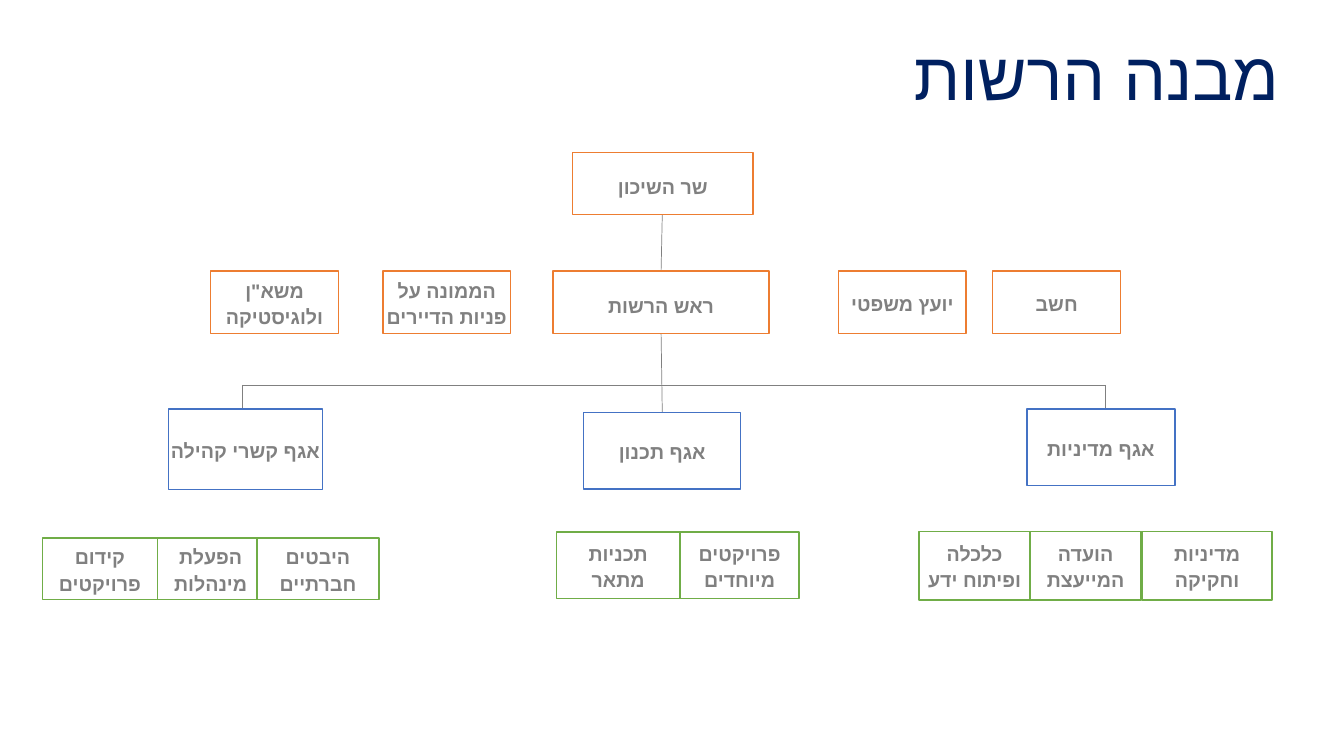
from lxml.etree import SubElement
from pptx import Presentation
from pptx.dml.color import RGBColor
from pptx.enum.shapes import MSO_CONNECTOR, MSO_SHAPE
from pptx.enum.text import MSO_ANCHOR, MSO_AUTO_SIZE, PP_ALIGN
from pptx.oxml.ns import qn
from pptx.util import Cm, Pt

NAVY = RGBColor(0x00, 0x20, 0x60)
GRAY = RGBColor(0x80, 0x80, 0x80)
WHITE = RGBColor(0xFF, 0xFF, 0xFF)
ORANGE = RGBColor(0xED, 0x7D, 0x31)
BLUE = RGBColor(0x44, 0x72, 0xC4)
GREEN = RGBColor(0x70, 0xAD, 0x47)
FONT = "Arial"

deck = Presentation()
deck.slide_width, deck.slide_height = Cm(33.87), Cm(19.05)
slide = deck.slides.add_slide(deck.slide_layouts[5])


def add_text(para, text, size, color, bold):
    """Add one Hebrew run, with the font set for complex script too."""
    run = para.add_run()
    run.text = text
    font = run.font
    font.name, font.size, font.bold = FONT, Pt(size), bold
    font.color.rgb = color
    SubElement(font._element, qn("a:cs")).set("typeface", FONT)


def add_box(text, left, top, width, height, color, pitch=18.7, rtl=False):
    box = slide.shapes.add_shape(
        MSO_SHAPE.RECTANGLE, Cm(left), Cm(top), Cm(width), Cm(height))
    box.shadow.inherit = False
    box.fill.solid()
    box.fill.fore_color.rgb = WHITE
    box.line.color.rgb = color
    box.line.width = Pt(1)
    frame = box.text_frame
    frame.word_wrap = True
    frame.vertical_anchor = MSO_ANCHOR.MIDDLE
    frame.margin_left = frame.margin_right = 0
    frame.margin_top = frame.margin_bottom = Cm(0.18)
    para = frame.paragraphs[0]
    para.alignment = PP_ALIGN.CENTER
    para.line_spacing = Pt(pitch)
    if rtl:
        para._p.get_or_add_pPr().set("rtl", "1")
    for index, part in enumerate(text.split("\n")):
        if index:
            para.add_line_break()
        add_text(para, part, 14, GRAY, True)


# Title
title = slide.shapes.title
title.left, title.top = Cm(4.32), Cm(0.71)
title.width, title.height = Cm(28.17), Cm(2.31)
title.text_frame.auto_size = MSO_AUTO_SIZE.NONE
title.text_frame.vertical_anchor = MSO_ANCHOR.TOP
para = title.text_frame.paragraphs[0]
para.alignment = PP_ALIGN.RIGHT
para._p.get_or_add_pPr().set("rtl", "1")
add_text(para, "מבנה הרשות", 48, NAVY, False)

# Links between the levels
BUS, LOW = 9.7, 10.31
WEST, EAST = 6.12, 27.86
links = [
    (16.69, 5.41, 16.66, 6.83),
    (16.66, 8.4, 16.69, 10.39),
    (WEST, BUS, EAST, BUS),
    (WEST, BUS, WEST, LOW),
    (EAST, BUS, EAST, LOW),
]
for ends in links:
    link = slide.shapes.add_connector(
        MSO_CONNECTOR.STRAIGHT, *[Cm(end) for end in ends])
    link.line.color.rgb = GRAY
    link.line.width = Pt(0.5)
    SubElement(link._element.spPr, qn("a:effectLst"))

# Minister, head and staff
ROW, HIGH = 6.83, 1.57
add_box("שר השיכון", 14.43, 3.84, 4.55, HIGH, ORANGE, 21.3, True)
add_box("ראש הרשות", 13.94, ROW, 5.44, HIGH, ORANGE, 21.3, True)
staff = [
    ("חשב", 25.02),
    ("יועץ משפטי", 21.13),
    ("הממונה על פניות הדיירים", 9.65),
    ('משא"ן ולוגיסטיקה', 5.31),
]
for text, left in staff:
    add_box(text, left, ROW, 3.22, HIGH, ORANGE)

# Divisions
units = [
    ("אגף מדיניות", 25.88, LOW, 3.73, 1.93),
    ("אגף תכנון", 14.71, 10.39, 3.96, 1.93),
    ("אגף קשרי קהילה", 4.24, LOW, 3.89, 2.03),
]
for unit in units:
    add_box(*unit, BLUE)

# Teams: top and height of each group, then text, left and width
groups = [
    (13.39, 1.73, [("מדיניות וחקיקה", 28.78, 3.28),
                   ("הועדה\nהמייעצת", 25.96, 2.8),
                   ("כלכלה\nופיתוח ידע", 23.16, 2.8)]),
    (13.41, 1.68, [("פרויקטים מיוחדים", 17.14, 3.0),
                   ("תכניות\nמתאר", 14.02, 3.12)]),
    (13.56, 1.55, [("הפעלת מינהלות", 3.86, 2.9),
                   ("היבטים חברתיים", 6.48, 3.07),
                   ("קידום פרויקטים", 1.07, 2.9)]),
]
for top, height, teams in groups:
    for text, left, width in teams:
        add_box(text, left, top, width, height, GREEN)

deck.save("out.pptx")
